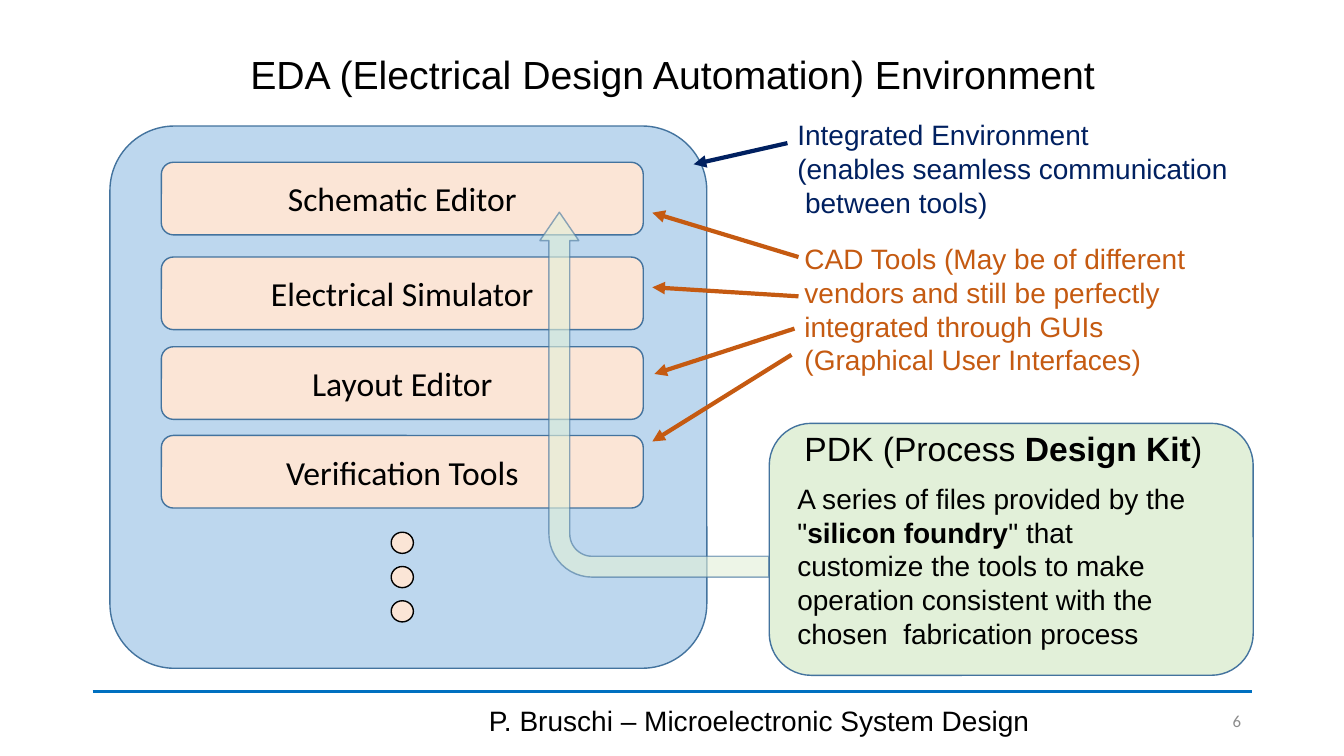
"""Build the EDA environment slide with its tools, callouts and design kit."""
from dataclasses import dataclass

from lxml.etree import SubElement
from pptx import Presentation
from pptx.dml.color import RGBColor
from pptx.enum.shapes import MSO_CONNECTOR as Connector, MSO_SHAPE as Shape
from pptx.enum.text import MSO_ANCHOR as Anchor, MSO_AUTO_SIZE as AutoSize, PP_ALIGN as Align
from pptx.oxml.ns import qn
from pptx.util import Pt

PX = 9144


@dataclass(frozen=True)
class Theme:
    black: str = "000000"
    gray: str = "8C8C8C"
    navy: str = "002060"
    orange: str = "C55A11"
    rule: str = "0070C0"
    outline: str = "43739E"
    environment: str = "BDD7EE"
    tool: str = "FBE5D6"
    kit: str = "E2F0D9"
    heading_font: str = "Arial"
    tool_font: str = "Calibri"
    title_size: int = 28
    heading_size: int = 24
    body_size: int = 20
    number_size: int = 12


THEME = Theme()

TITLE = "EDA (Electrical Design Automation) Environment"
FOOTER = "P. Bruschi – Microelectronic System Design"
PAGE_NUMBER = "6"
TOOLS = [("Schematic Editor", 161), ("Electrical Simulator", 255),
         ("Layout Editor", 344), ("Verification Tools", 432)]
ENVIRONMENT_NOTE = ["Integrated Environment", "(enables seamless communication", " between tools)"]
TOOLS_NOTE = ["CAD Tools (May be of different", "vendors and still be perfectly",
              "integrated through GUIs", "(Graphical User Interfaces)"]
KIT_HEADING = [("PDK (Process ", "Design Kit", ")")]
KIT_BODY = [("A series of files provided by the \"", "silicon foundry",
             "\" that customize the tools to make operation consistent with "
             "the chosen  fabrication process")]
ENVIRONMENT_ARROW = ((781, 142), (688, 163))
TOOL_ARROWS = [((792, 255), (647, 211)), ((792, 294), (647, 285)),
               ((788, 326), (649, 371)), ((785, 352), (647, 438))]
ENVIRONMENT_BOX = (109, 125, 592, 538)
KIT_BOX = (763, 420, 480, 250)
KIT_ARROW_BOX = (468, 278, 362, 227)
KIT_ARROW_BENDS = (0.091, 0.085, 0.124, 0.189)
TOOL_LEFT, TOOL_WIDTH, TOOL_HEIGHT = 160, 478, 72
DOT_COUNT, DOT_TOP, DOT_STEP, DOT_WIDTH, DOT_HEIGHT = 3, 528, 34, 22, 21


def scaled(lengths):
    return [length * PX for length in lengths]


def write(shape, paragraphs, size=THEME.body_size, font=THEME.heading_font, color=THEME.black,
          align=Align.LEFT, anchor=Anchor.TOP, wrap=True, grow=False, spacing=None):
    """Write paragraphs; in a tuple of runs, every second run is bold."""
    frame = shape.text_frame
    frame.word_wrap = wrap
    frame.vertical_anchor = anchor
    frame.auto_size = AutoSize.SHAPE_TO_FIT_TEXT if grow else AutoSize.NONE
    for index, content in enumerate(paragraphs):
        paragraph = frame.add_paragraph() if index else frame.paragraphs[0]
        paragraph.alignment = align
        paragraph.line_spacing = spacing
        runs = content if isinstance(content, tuple) else (content,)
        for position, text in enumerate(runs):
            run = paragraph.add_run()
            run.text = text
            run.font.name = font
            run.font.size = Pt(size)
            run.font.bold = position % 2 == 1
            run.font.color.rgb = RGBColor.from_string(color)


def add_text(slide, box, paragraphs, **text_format):
    write(slide.shapes.add_textbox(*scaled(box)), paragraphs, **text_format)


def add_box(slide, kind, box, fill, line=THEME.outline, adjustments=()):
    shape = slide.shapes.add_shape(kind, *scaled(box))
    shape.shadow.inherit = False
    shape.fill.solid()
    shape.fill.fore_color.rgb = RGBColor.from_string(fill)
    shape.line.color.rgb = RGBColor.from_string(line)
    shape.line.width = Pt(1)
    for index, value in enumerate(adjustments):
        shape.adjustments[index] = value
    return shape


def add_line(slide, start, end, color, width, arrow=False):
    line = slide.shapes.add_connector(Connector.STRAIGHT, *scaled(start + end))
    line.line.color.rgb = RGBColor.from_string(color)
    line.line.width = Pt(width)
    properties = line._element.spPr
    if arrow:
        SubElement(properties.find(qn("a:ln")), qn("a:tailEnd"), type="triangle")
    SubElement(properties, qn("a:effectLst"))


def set_opacity(shape, fill_percent, line_percent):
    properties = shape._element.spPr
    for place, percent in (("a:solidFill", fill_percent), ("a:ln/a:solidFill", line_percent)):
        tags = "/".join(qn(tag) for tag in place.split("/"))
        color = properties.find(tags + "/" + qn("a:srgbClr"))
        SubElement(color, qn("a:alpha"), val=str(percent * 1000))


def add_environment(slide):
    add_box(slide, Shape.ROUNDED_RECTANGLE, ENVIRONMENT_BOX, THEME.environment, adjustments=[0.119])
    for name, top in TOOLS:
        tool = add_box(slide, Shape.ROUNDED_RECTANGLE,
                       (TOOL_LEFT, top, TOOL_WIDTH, TOOL_HEIGHT), THEME.tool)
        write(tool, [name], size=THEME.heading_size, font=THEME.tool_font,
              align=Align.CENTER, anchor=Anchor.MIDDLE)
    dot_left = TOOL_LEFT + (TOOL_WIDTH - DOT_WIDTH) // 2
    for index in range(DOT_COUNT):
        add_box(slide, Shape.OVAL, (dot_left, DOT_TOP + index * DOT_STEP, DOT_WIDTH, DOT_HEIGHT),
                THEME.tool, line=THEME.black)


def add_notes(slide):
    add_text(slide, (781, 112, 450, 111), ENVIRONMENT_NOTE, color=THEME.navy, wrap=False, grow=True)
    add_text(slide, (788, 235, 408, 145), TOOLS_NOTE, color=THEME.orange, wrap=False, grow=True)
    add_line(slide, *ENVIRONMENT_ARROW, THEME.navy, 3, arrow=True)
    for start, end in TOOL_ARROWS:
        add_line(slide, start, end, THEME.orange, 3, arrow=True)


def add_design_kit(slide):
    arrow = add_box(slide, Shape.BENT_ARROW, KIT_ARROW_BOX, THEME.kit, adjustments=KIT_ARROW_BENDS)
    arrow.rotation = 270
    set_opacity(arrow, 62, 60)
    add_box(slide, Shape.ROUNDED_RECTANGLE, KIT_BOX, THEME.kit)
    add_text(slide, (788, 420, 418, 50), KIT_HEADING, size=THEME.heading_size, wrap=False, grow=True)
    add_text(slide, (781, 473, 417, 178), KIT_BODY, grow=True)


def main():
    presentation = Presentation()
    presentation.slide_width, presentation.slide_height = scaled((1333, 750))
    slide = presentation.slides.add_slide(presentation.slide_layouts[6])
    add_line(slide, (92, 686), (1242, 686), THEME.rule, 2.75)
    add_text(slide, (92, 40, 1150, 72), [TITLE], size=THEME.title_size,
             align=Align.CENTER, anchor=Anchor.MIDDLE, spacing=0.9)
    add_text(slide, (442, 695, 622, 40), [FOOTER], align=Align.CENTER, anchor=Anchor.MIDDLE)
    add_text(slide, (1145, 695, 96, 40), [PAGE_NUMBER], size=THEME.number_size,
             font=THEME.tool_font, color=THEME.gray, align=Align.RIGHT, anchor=Anchor.MIDDLE)
    add_environment(slide)
    add_notes(slide)
    add_design_kit(slide)
    presentation.save("out.pptx")


if __name__ == "__main__":
    main()
